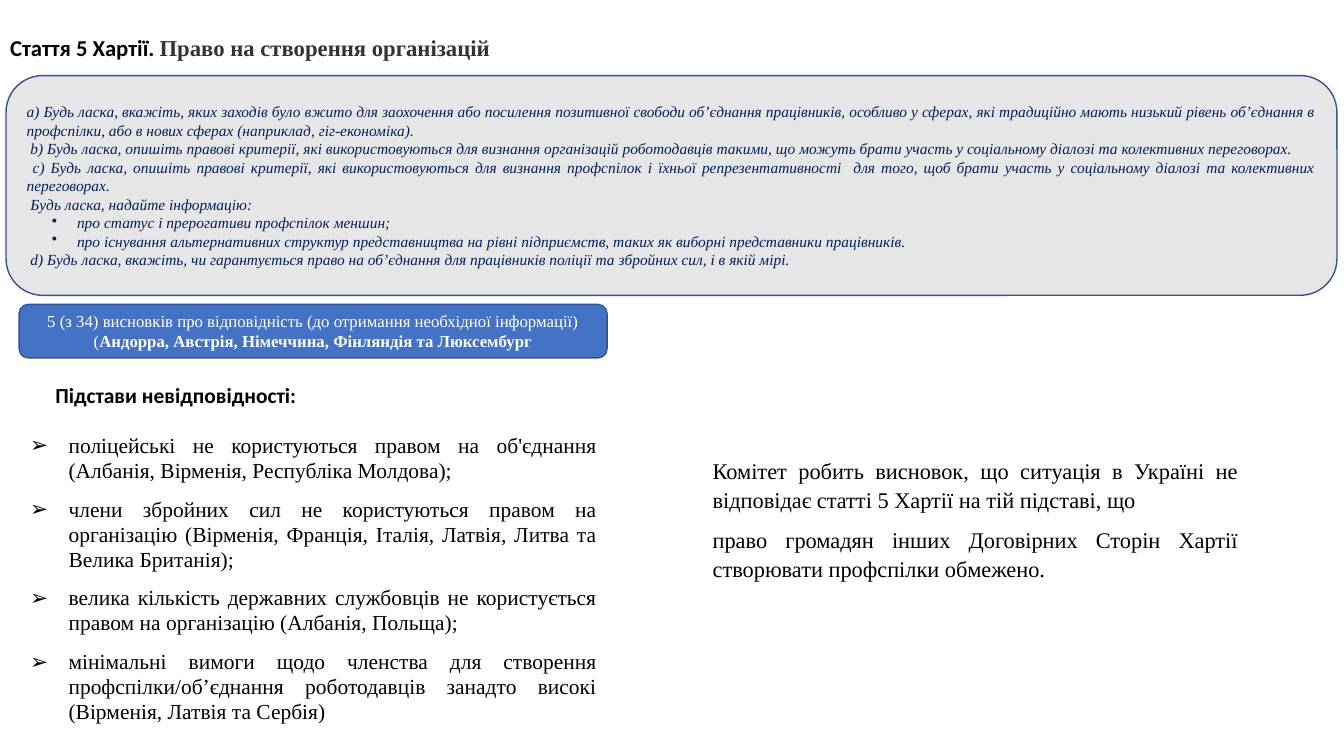
"""Builds a slide on Article 5 of the Charter, the right to organise."""
from lxml.etree import SubElement
from pptx import Presentation
from pptx.dml.color import RGBColor
from pptx.enum.shapes import MSO_SHAPE
from pptx.enum.text import MSO_ANCHOR, MSO_AUTO_SIZE, PP_ALIGN
from pptx.oxml.ns import qn
from pptx.util import Inches, Pt

COLORS = {
    "black": "000000", "heading": "333333", "navy": "002060", "white": "FFFFFF",
    "panel": "E7E6E6", "badge": "4472C4", "outline": "325491",
}
SERIF = "Times New Roman"
SANS = "Calibri"

QUESTIONS = [
    "a) Будь ласка, вкажіть, яких заходів було вжито для заохочення або посилення позитивної свободи об’єднання працівників, особливо у сферах, які традиційно мають низький рівень об’єднання в профспілки, або в нових сферах (наприклад, гіг-економіка).",
    " b) Будь ласка, опишіть правові критерії, які використовуються для визнання організацій роботодавців такими, що можуть брати участь у соціальному діалозі та колективних переговорах.",
    " c) Будь ласка, опишіть правові критерії, які використовуються для визнання профспілок і їхньої репрезентативності  для того, щоб брати участь у соціальному діалозі та колективних переговорах.",
    " Будь ласка, надайте інформацію:",
]
REQUESTED_DETAILS = [
    "про статус і прерогативи профспілок меншин;",
    "про існування альтернативних структур представництва на рівні підприємств, таких як виборні представники працівників.",
]
LAST_QUESTION = " d) Будь ласка, вкажіть, чи гарантується право на об’єднання для працівників поліції та збройних сил, і в якій мірі."
GROUNDS = [
    "поліцейські не користуються правом на об'єднання (Албанія, Вірменія, Республіка Молдова);",
    "члени збройних сил не користуються правом на організацію (Вірменія, Франція, Італія, Латвія, Литва та Велика Британія);",
    "велика кількість державних службовців не користується правом на організацію (Албанія, Польща);",
    "мінімальні вимоги щодо членства для створення профспілки/об’єднання роботодавців занадто високі (Вірменія, Латвія та Сербія)",
]
CONCLUSION = [
    "Комітет робить висновок, що ситуація в Україні не відповідає статті 5 Хартії на тій підставі, що",
    "право громадян інших Договірних Сторін Хартії створювати профспілки обмежено.",
]


class SlideBuilder:
    """Holds the presentation, its current slide and the shared style."""

    def __init__(self):
        self.presentation = Presentation()
        self.presentation.slide_width = Inches(13.33)
        self.presentation.slide_height = Inches(7.5)
        self.slide = self.presentation.slides.add_slide(self.presentation.slide_layouts[1])

    def area(self, left, top, width, height):
        """Turns percentages of the slide into lengths."""
        across = self.presentation.slide_width / 100
        down = self.presentation.slide_height / 100
        return int(left * across), int(top * down), int(width * across), int(height * down)

    def frame(self, shape, anchor):
        """Prepares the text frame of a shape."""
        text_frame = shape.text_frame
        text_frame.word_wrap = True
        text_frame.auto_size = MSO_AUTO_SIZE.NONE
        text_frame.vertical_anchor = anchor
        return text_frame

    def placeholder(self, index, area, anchor=MSO_ANCHOR.TOP):
        """Moves a template placeholder and returns its text frame."""
        shape = self.slide.placeholders[index]
        shape.left, shape.top, shape.width, shape.height = self.area(*area)
        return self.frame(shape, anchor)

    def rounded_box(self, area, fill):
        """Adds an outlined rounded rectangle and returns its text frame."""
        shape = self.slide.shapes.add_shape(MSO_SHAPE.ROUNDED_RECTANGLE, *self.area(*area))
        shape.shadow.inherit = False
        shape.fill.solid()
        shape.fill.fore_color.rgb = RGBColor.from_string(COLORS[fill])
        shape.line.color.rgb = RGBColor.from_string(COLORS["outline"])
        shape.line.width = Pt(1)
        return self.frame(shape, MSO_ANCHOR.MIDDLE)

    def text_box(self, area):
        """Adds a text box and returns its text frame."""
        return self.frame(self.slide.shapes.add_textbox(*self.area(*area)), MSO_ANCHOR.TOP)

    def paragraph(self, text_frame, align=PP_ALIGN.JUSTIFY, spacing=1.0, before=0, after=0,
                  indent=(0, 0), bullet=None):
        """Adds a paragraph, using the first one while it is empty."""
        first = text_frame.paragraphs[0]
        paragraph = text_frame.add_paragraph() if first.runs else first
        paragraph.alignment = align
        paragraph.line_spacing = spacing
        paragraph.space_before = Pt(before)
        paragraph.space_after = Pt(after)
        properties = paragraph._p.get_or_add_pPr()
        properties.set("marL", str(Inches(indent[0])))
        properties.set("indent", str(Inches(indent[1])))
        if bullet:
            SubElement(properties, qn("a:buChar")).set("char", bullet)
        else:
            SubElement(properties, qn("a:buNone"))
        return paragraph

    def run(self, paragraph, text, size, color="black", font=SERIF, bold=False, italic=False):
        """Adds a formatted run."""
        run = paragraph.add_run()
        run.text = text
        run.font.name = font
        run.font.size = Pt(size)
        run.font.bold = bold
        run.font.italic = italic
        run.font.color.rgb = RGBColor.from_string(COLORS[color])


def main():
    """Fills the slide and saves it."""
    builder = SlideBuilder()

    title = builder.placeholder(0, (0, 4.67, 75.1, 6.13))
    title.margin_top = Inches(0.02)
    heading = builder.paragraph(title, PP_ALIGN.LEFT, spacing=0.9)
    builder.run(heading, "Стаття 5 Хартії. ", 16.2, font=SANS, bold=True)
    builder.run(heading, "Право на створення організацій", 16.2, "heading", bold=True)

    body = builder.placeholder(1, (1.5, 50, 43.66, 46.4))
    subheading = builder.paragraph(body, spacing=0.97, before=10, after=8, indent=(0.25, 0))
    builder.run(subheading, "Підстави невідповідності:", 15.3, font=SANS, bold=True)
    for ground in GROUNDS:
        item = builder.paragraph(body, spacing=0.97, before=10, indent=(0.38, -0.38), bullet="➢")
        builder.run(item, ground, 15.3)

    panel = builder.rounded_box((0.45, 10, 99.03, 29.07), "panel")
    plain = {}
    bulleted = {"indent": (0.5, -0.25), "bullet": "•"}
    for texts, layout in ((QUESTIONS, plain), (REQUESTED_DETAILS, bulleted), ([LAST_QUESTION], plain)):
        for text in texts:
            builder.run(builder.paragraph(panel, **layout), text, 11, "navy", italic=True)

    conclusion = builder.text_box((52.29, 59.6, 40.58, 18))
    for text in CONCLUSION:
        builder.run(builder.paragraph(conclusion, spacing=1.07, after=8), text, 16)

    badge = builder.rounded_box((1.43, 40.27, 43.74, 7.07), "badge")
    summary = builder.paragraph(badge, PP_ALIGN.CENTER)
    builder.run(summary, "5 (з 34) висновків про відповідність (до отримання необхідної інформації) (", 12, "white")
    builder.run(summary, "Андорра, Австрія, Німеччина, Фінляндія та Люксембург", 12, "white", bold=True)

    builder.presentation.save("out.pptx")


if __name__ == "__main__":
    main()
